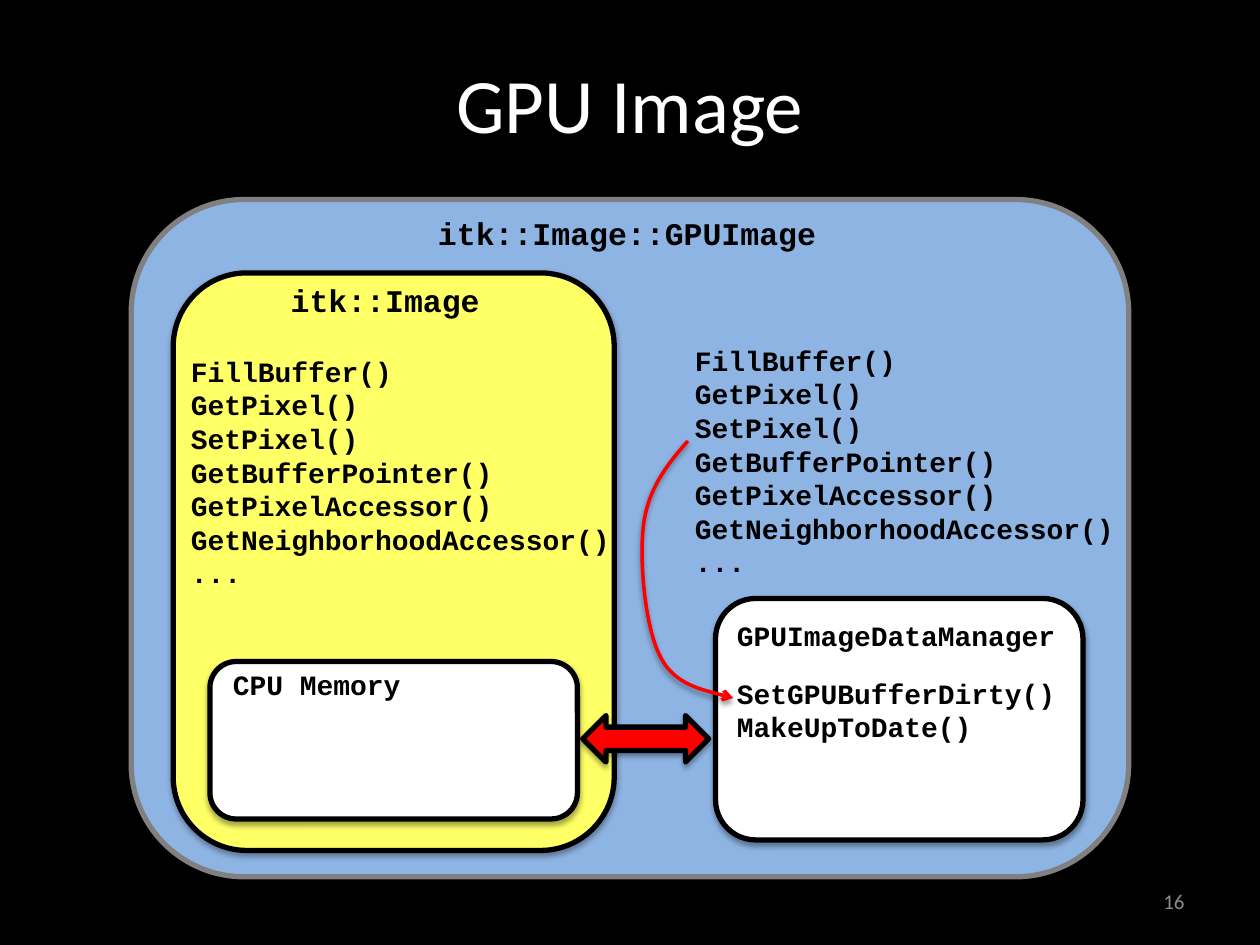
from lxml.etree import SubElement
from pptx import Presentation
from pptx.dml.color import RGBColor
from pptx.enum.shapes import MSO_SHAPE
from pptx.enum.text import MSO_ANCHOR, PP_ALIGN
from pptx.oxml.ns import qn
from pptx.util import Pt

BLACK = RGBColor(0x00, 0x00, 0x00)
WHITE = RGBColor(0xFF, 0xFF, 0xFF)
GRAY = RGBColor(0x80, 0x80, 0x80)
PALE = RGBColor(0x8C, 0x8C, 0x8C)
BLUE = RGBColor(0x8E, 0xB4, 0xE3)
YELLOW = RGBColor(0xFF, 0xFF, 0x66)
RED = RGBColor(0xFF, 0x00, 0x00)
CODE = "Courier New"
LEFT, MID, RIGHT = PP_ALIGN.LEFT, PP_ALIGN.CENTER, PP_ALIGN.RIGHT

deck = Presentation()
deck.slide_width, deck.slide_height = Pt(720), Pt(540)
slide = deck.slides.add_slide(deck.slide_layouts[6])
slide.background.fill.solid()
slide.background.fill.fore_color.rgb = BLACK


def add_text(lines, box, size, font=CODE, color=BLACK, align=LEFT, wrap=False):
    frame = slide.shapes.add_textbox(*map(Pt, box)).text_frame
    frame.word_wrap = wrap
    frame.text = "\n".join(lines)
    if font != CODE:
        frame.vertical_anchor = MSO_ANCHOR.MIDDLE
    for para in frame.paragraphs:
        para.alignment = align
        for run in para.runs:
            run.font.name, run.font.size = font, Pt(size)
            run.font.bold = font == CODE
            run.font.color.rgb = color


def style(shape, line, width, alpha):
    shape.line.color.rgb, shape.line.width = line, Pt(width)
    # Soft shadow straight below
    shape.shadow.inherit = False
    effects = shape._element.spPr.find(qn("a:effectLst"))
    shadow = SubElement(effects, qn("a:outerShdw"), blurRad=str(Pt(3.1)),
                        dist=str(Pt(1.8)), dir="5400000", rotWithShape="0")
    tint = SubElement(shadow, qn("a:srgbClr"), val="000000")
    SubElement(tint, qn("a:alpha"), val=str(alpha * 1000))


# Title and page number
add_text(["GPU Image"], (36, 21.6, 648, 74.4), 44, "Calibri", WHITE, MID, True)
add_text(["16"], (516, 500.5, 168, 28.8), 12, "Calibri", PALE, RIGHT, True)

# Class and memory boxes, and the transfer arrow
ROUND, DOUBLE = MSO_SHAPE.ROUNDED_RECTANGLE, MSO_SHAPE.LEFT_RIGHT_ARROW
for kind, box, fill, line in [
    (ROUND, (75, 114, 570, 387), BLUE, GRAY),
    (ROUND, (99, 156, 252, 330), YELLOW, BLACK),
    (ROUND, (120, 378, 210, 90), WHITE, BLACK),
    (ROUND, (408.9, 342, 210, 138), WHITE, BLACK),
    (DOUBLE, (333, 408.9, 72, 26.6), RED, BLACK),
]:
    shape = slide.shapes.add_shape(kind, *map(Pt, box))
    shape.fill.solid()
    shape.fill.fore_color.rgb = fill
    style(shape, line, 3, 35)

# Box headings
add_text(["itk::Image::GPUImage"], (243.2, 119, 232.6, 28.8), 18)
add_text(["itk::Image"], (159, 157.2, 123.8, 28.8), 18)
add_text(["CPU Memory"], (126, 378, 111.6, 26.6), 16)
add_text(["GPUImageDataManager"], (414, 350, 198.7, 26.6), 16)

# Method lists
methods = ["FillBuffer()", "GetPixel()", "SetPixel()", "GetBufferPointer()",
           "GetPixelAccessor()", "GetNeighborhoodAccessor()", "..."]
for left, top in [(102, 199), (390, 192.7)]:
    add_text(methods, (left, top, 257, 143.3), 16)
add_text(["SetGPUBufferDirty()", "MakeUpToDate()"],
         (414, 383, 198.7, 65.5), 16, wrap=True)

# Curved call arrow: every three points after the start make one Bezier
start, *rest = [(393.1, 252), (381.6, 265), (370.8, 278.6), (367.9, 298.8),
                (365, 319.7), (368.6, 358.6), (377.3, 375.1),
                (385.2, 391.7), (419, 398.9), (419, 398.9)]
pen = slide.shapes.build_freeform(Pt(start[0]), Pt(start[1]))
pen.add_line_segments([(Pt(x), Pt(y)) for x, y in rest], close=False)
curve = pen.convert_to_shape()
curve.fill.background()
style(curve, RED, 2, 38)
track = next(curve._element.iter(qn("a:lnTo"))).getparent()
steps = track.findall(qn("a:lnTo"))
for i in range(0, len(steps), 3):
    bend = SubElement(track, qn("a:cubicBezTo"))
    for step in steps[i:i + 3]:
        bend.append(step[0])
        track.remove(step)
SubElement(curve.line._get_or_add_ln(), qn("a:tailEnd"), type="arrow")

deck.save("out.pptx")
